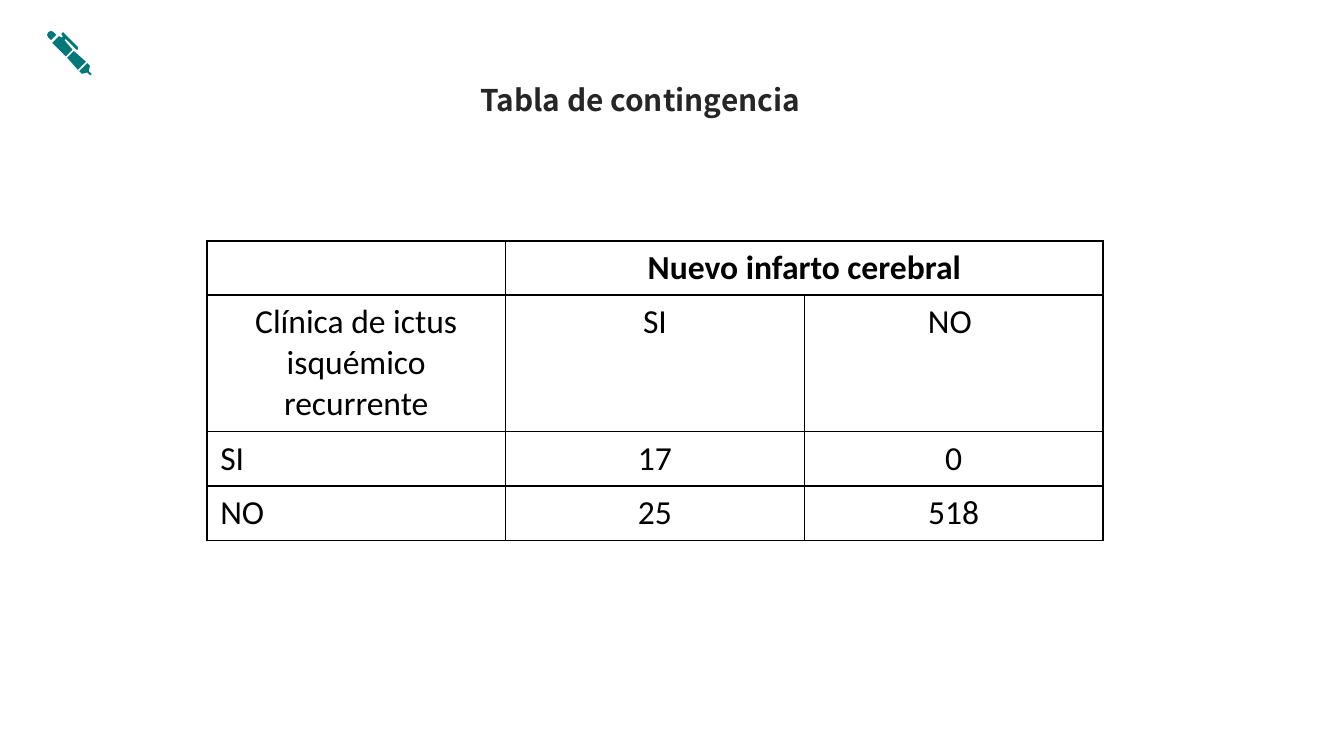
from dataclasses import dataclass

from lxml import etree
from pptx import Presentation
from pptx.dml.color import RGBColor
from pptx.enum.text import MSO_AUTO_SIZE, PP_ALIGN
from pptx.oxml.ns import qn
from pptx.slide import Slide
from pptx.table import _Cell
from pptx.text.text import _Paragraph
from pptx.util import Cm, Pt

LEFT, CENTER = PP_ALIGN.LEFT, PP_ALIGN.CENTER
FIT_SHAPE = MSO_AUTO_SIZE.SHAPE_TO_FIT_TEXT
BLANK_LAYOUT = 6


@dataclass(frozen=True)
class Theme:
    paper: str = "FFFFFF"
    ink: str = "000000"
    heading: str = "262626"
    accent: str = "007779"
    heading_font: str = "Noto Sans CJK SC"
    table_font: str = "Calibri"
    heading_size: int = 16
    table_size: int = 18
    border_width: int = 1


@dataclass(frozen=True)
class Style:
    font: str
    size: int
    color: str
    bold: bool = False


@dataclass(frozen=True)
class Entry:
    row: int
    column: int
    text: str
    align: PP_ALIGN = CENTER
    bold: bool = False


THEME = Theme()
PEN_UNIT = Cm(0.0254)
PEN_PARTS = [
    [(65, 47), (59, 53), (61, 55), (65, 54), (67, 56), (68, 56.5), (68.5, 56),
     (68, 55), (66, 53), (67, 49)],
    [(55, 38), (50, 43), (58, 52), (64, 46)],
    [(48, 25), (47, 24.3), (46, 25), (46, 26), (47, 27), (46, 28), (44, 27),
     (39, 32), (49, 42), (54, 37), (48, 30), (49, 29), (57, 37), (58, 37),
     (58.5, 36), (58, 35)],
    [(38, 23), (36, 24), (35.3, 26), (36, 28), (38, 30), (42, 26), (40, 24)],
]
ENTRIES = [
    Entry(0, 1, "Nuevo infarto cerebral", bold=True),
    Entry(1, 0, "Clínica de ictus isquémico recurrente"),
    Entry(1, 1, "SI"),
    Entry(1, 2, "NO "),
    Entry(2, 0, "SI", LEFT),
    Entry(2, 1, "17"),
    Entry(2, 2, "0"),
    Entry(3, 0, "NO", LEFT),
    Entry(3, 1, "25"),
    Entry(3, 2, "518"),
]


def rgb(color: str) -> RGBColor:
    return RGBColor.from_string(color)


def write(para: _Paragraph, text: str, style: Style, align: PP_ALIGN) -> None:
    para.alignment = align
    span = para.add_run()
    span.text = text
    span.font.name = style.font
    span.font.size = Pt(style.size)
    span.font.bold = style.bold
    span.font.color.rgb = rgb(style.color)


def draw_pen(page: Slide) -> None:
    builder = page.shapes.build_freeform(*PEN_PARTS[0][0], scale=PEN_UNIT)
    for part in PEN_PARTS:
        if part is not PEN_PARTS[0]:
            builder.move_to(*part[0])
        builder.add_line_segments(part[1:], close=True)
    pen = builder.convert_to_shape()
    pen.shadow.inherit = False
    pen.fill.solid()
    pen.fill.fore_color.rgb = rgb(THEME.accent)
    pen.line.fill.background()


def draw_heading(page: Slide) -> None:
    box = page.shapes.add_textbox(Cm(8.3), Cm(1.55), Cm(7.6), Cm(0.69))
    frame = box.text_frame
    frame.word_wrap = True
    frame.auto_size = FIT_SHAPE
    frame.margin_left = frame.margin_right = 0
    frame.margin_top = frame.margin_bottom = 0
    style = Style(THEME.heading_font, THEME.heading_size, THEME.heading, True)
    write(frame.paragraphs[0], "Tabla de contingencia", style, CENTER)


def format_cell(cell: _Cell) -> None:
    cell.fill.solid()
    cell.fill.fore_color.rgb = rgb(THEME.paper)
    properties = cell._tc.get_or_add_tcPr()
    for position, side in enumerate(("lnL", "lnR", "lnT", "lnB")):
        border = etree.Element(qn(f"a:{side}"), w=str(Pt(THEME.border_width)))
        fill = etree.SubElement(border, qn("a:solidFill"))
        etree.SubElement(fill, qn("a:srgbClr"), val=THEME.ink)
        properties.insert(position, border)


def draw_table(page: Slide) -> None:
    height = Cm(5.64)
    holder = page.shapes.add_table(4, 3, Cm(3.91), Cm(4.55), Cm(16.94), height)
    table = holder.table
    table.first_row = False
    table.horz_banding = False
    for row in table.rows:
        row.height = Cm(1.03)
    holder.height = height
    for cell in table.iter_cells():
        format_cell(cell)
    table.cell(0, 1).merge(table.cell(0, 2))
    for entry in ENTRIES:
        para = table.cell(entry.row, entry.column).text_frame.paragraphs[0]
        style = Style(THEME.table_font, THEME.table_size, THEME.ink, entry.bold)
        write(para, entry.text, style, entry.align)


def main() -> None:
    deck = Presentation()
    deck.slide_width = Cm(25.4)
    deck.slide_height = Cm(14.29)
    page = deck.slides.add_slide(deck.slide_layouts[BLANK_LAYOUT])
    page.background.fill.solid()
    page.background.fill.fore_color.rgb = rgb(THEME.paper)
    draw_pen(page)
    draw_table(page)
    draw_heading(page)
    deck.save("out.pptx")


if __name__ == "__main__":
    main()
